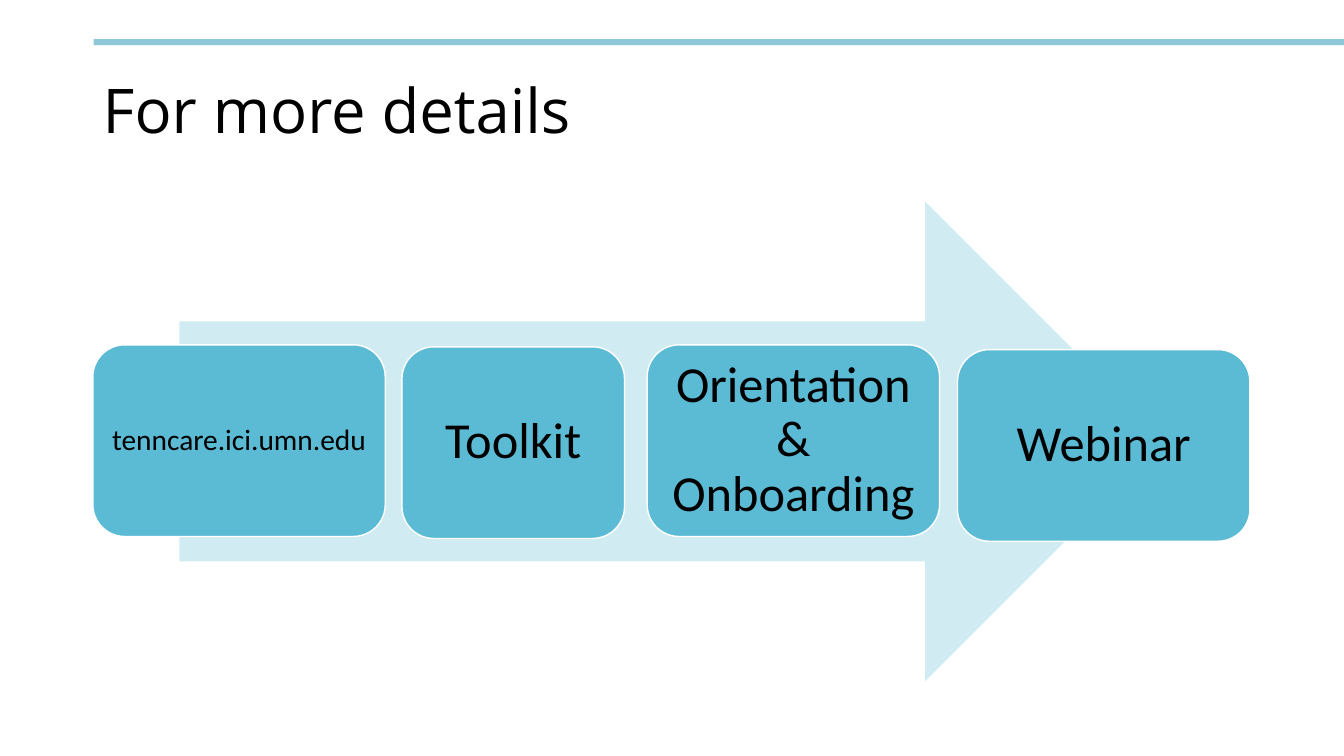
import pptx
import pptx.dml.color
import pptx.enum.shapes
import pptx.enum.text
import pptx.util
from pptx.util import Cm

Shape = pptx.enum.shapes.MSO_SHAPE
Align = pptx.enum.text.PP_ALIGN
Anchor = pptx.enum.text.MSO_ANCHOR

COLORS = {
    "rule": "8EC7D7",
    "arrow": "D0EBF2",
    "card": "5BBBD5",
    "outline": "FFFFFF",
    "text": "000000",
}
CARD_HEIGHT = 4.83
CARDS = [
    ("tenncare.ici.umn.edu", 2.34, 8.69, 7.37, 21, 0.23),
    ("Toolkit", 10.13, 8.74, 5.61, 36, 0.35),
    ("Orientation & Onboarding", 16.31, 8.69, 7.37, 36, 0.35),
    ("Webinar", 24.13, 8.81, 7.37, 36, 0.35),
]


def rgb(name):
    return pptx.dml.color.RGBColor.from_string(COLORS[name])


def set_attributes(target, values):
    for name, value in values.items():
        setattr(target, name, value)


def add_block(page, kind, area, fill, outline=None):
    block = page.shapes.add_shape(kind, *map(Cm, area))
    block.shadow.inherit = False
    block.fill.solid()
    block.fill.fore_color.rgb = rgb(fill)
    if outline:
        block.line.color.rgb = rgb(outline)
        block.line.width = pptx.util.Pt(1)
    else:
        block.line.fill.background()
    return block


def write_text(box, text, font, size, align, inset):
    frame = box.text_frame
    set_attributes(frame, {
        "word_wrap": True,
        "vertical_anchor": Anchor.MIDDLE,
        **{f"margin_{side}": Cm(inset) for side in ("left", "top", "right", "bottom")},
    })
    para = frame.paragraphs[0]
    set_attributes(para, {"alignment": align, "line_spacing": 0.9})
    span = para.add_run()
    span.text = text
    set_attributes(span.font, {"name": font, "size": pptx.util.Pt(size)})
    span.font.color.rgb = rgb("text")


def add_title(page, text):
    box = page.shapes.add_textbox(Cm(2.34), Cm(1.02), Cm(29.21), Cm(3.68))
    write_text(box, text, "Open Sans", 44, Align.LEFT, 0.25)


def add_card(page, text, left, top, width, size, inset):
    card = add_block(page, Shape.ROUNDED_RECTANGLE, (left, top, width, CARD_HEIGHT), "card", "outline")
    write_text(card, text, "Calibri", size, Align.CENTER, inset)


def main():
    deck = pptx.Presentation()
    set_attributes(deck, {"slide_width": Cm(33.87), "slide_height": Cm(19.05)})
    page = deck.slides.add_slide(deck.slide_layouts[6])
    add_block(page, Shape.RECTANGLE, (2.36, 0.99, 31.51, 0.15), "rule")
    add_title(page, "For more details")
    add_block(page, Shape.RIGHT_ARROW, (4.52, 5.08, 24.84, 12.09), "arrow")
    for card in CARDS:
        add_card(page, *card)
    deck.save("out.pptx")


if __name__ == "__main__":
    main()
